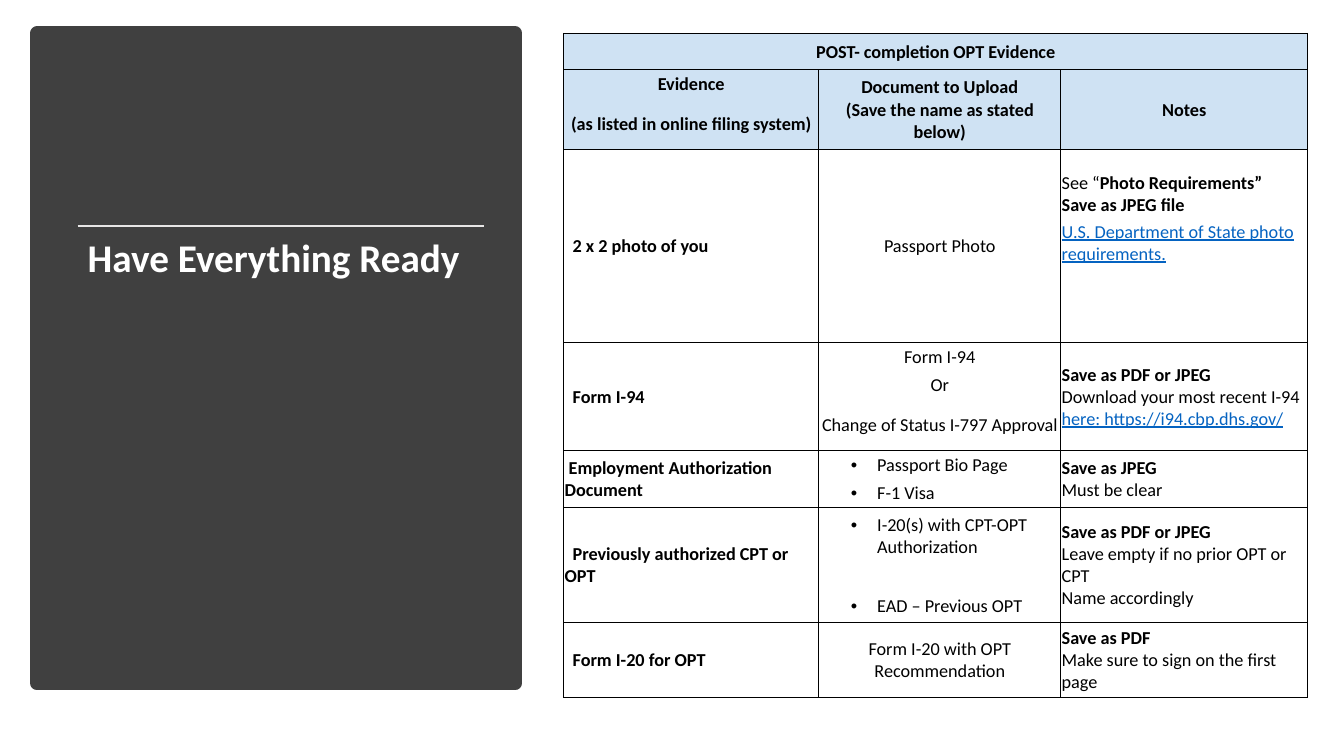
from dataclasses import dataclass

from lxml.etree import SubElement
from pptx import Presentation
from pptx.dml.color import RGBColor
from pptx.enum.shapes import MSO_CONNECTOR as Connector, MSO_SHAPE as Preset
from pptx.enum.text import MSO_ANCHOR as Anchor, MSO_AUTO_SIZE as AutoSize, PP_ALIGN as Align
from pptx.oxml.ns import qn
from pptx.slide import Slide
from pptx.table import Table, _Cell as Cell
from pptx.text.text import _Paragraph as Paragraph
from pptx.util import Inches, Pt


@dataclass(frozen=True)
class Theme:
    font: str = "Calibri"
    title_size: float = 28
    table_size: float = 13
    border_width: float = 0.5
    rule_width: float = 1.75
    ink: str = "000000"
    paper: str = "FFFFFF"
    panel: str = "404040"
    rule: str = "E7E6E6"
    header: str = "CFE2F3"
    link: str = "0563C1"


@dataclass(frozen=True)
class Piece:
    text: str
    bold: bool = False
    link: bool = False


@dataclass(frozen=True)
class Line:
    pieces: tuple[Piece, ...]
    align: Align = Align.LEFT
    indent: float = 0
    bullet: bool = False


@dataclass(frozen=True)
class Entry:
    row: int
    col: int
    lines: tuple[Line, ...]
    rows: int = 1
    cols: int = 1
    top: float = 0.01


THEME = Theme()
COLUMNS = (2.53, 2.4, 2.45)
GROUPS = (
    (0.36,),
    (0.28, 0.51),
    (0.66, 0.51, 0.74),
    (0.28, 0.28, 0.51),
    (0.28, 0.28),
    (0.57, 0.24, 0.34),
    (0.74,),
)


def heading(text: str) -> Line:
    return Line((Piece(text, bold=True),), Align.CENTER)


def label(text: str, indent: float = 0.08) -> tuple[Line, ...]:
    return (Line((Piece(text, bold=True),), indent=indent),)


def centred(text: str) -> tuple[Line, ...]:
    return (Line((Piece(text),), Align.CENTER),)


def bullet(text: str) -> tuple[Line, ...]:
    return (Line((Piece(text),), bullet=True),)


def note(file_type: str, *details: str) -> tuple[Line, ...]:
    return (Line((Piece(file_type, bold=True),)), *(Line((Piece(detail),)) for detail in details))


ENTRIES = (
    Entry(0, 0, (heading("POST- completion OPT Evidence"),), cols=3),
    Entry(1, 0, (heading("Evidence"),)),
    Entry(2, 0, (heading("(as listed in online filing system)"),)),
    Entry(1, 1, (heading("Document to Upload"), heading("(Save the name as stated below)")), rows=2),
    Entry(1, 2, (heading("Notes"),), rows=2),
    Entry(3, 0, label("2 x 2 photo of you"), rows=3),
    Entry(3, 1, centred("Passport Photo"), rows=3),
    Entry(3, 2, (
        Line((Piece("See “"), Piece("Photo Requirements”", bold=True))),
        Line((Piece("Save as JPEG file", bold=True),)),
    ), top=0.23),
    Entry(4, 2, (Line((Piece("U.S. Department of State photo requirements.", link=True),)),)),
    Entry(6, 0, label("Form I-94"), rows=3),
    Entry(6, 1, centred("Form I-94")),
    Entry(7, 1, centred("Or")),
    Entry(8, 1, centred("Change of Status I-797 Approval")),
    Entry(6, 2, (
        *note("Save as PDF or JPEG"),
        Line((Piece("Download your most recent I-94 "),
              Piece("here: https://i94.cbp.dhs.gov/", link=True))),
    ), rows=3),
    Entry(9, 0, label("Employment Authorization Document", 0.04), rows=2),
    Entry(9, 1, bullet("Passport Bio Page")),
    Entry(10, 1, bullet("F-1 Visa")),
    Entry(9, 2, note("Save as JPEG", "Must be clear"), rows=2),
    Entry(11, 0, label("Previously authorized CPT or OPT"), rows=3),
    Entry(11, 1, bullet("I-20(s) with CPT-OPT Authorization")),
    Entry(13, 1, bullet("EAD – Previous OPT")),
    Entry(11, 2, note("Save as PDF or JPEG", "Leave empty if no prior OPT or CPT",
                      "Name accordingly"), rows=3),
    Entry(14, 0, label("Form I-20 for OPT")),
    Entry(14, 1, centred("Form I-20 with OPT Recommendation")),
    Entry(14, 2, note("Save as PDF", "Make sure to sign on the first page")),
)


def rgb(value: str) -> RGBColor:
    return RGBColor.from_string(value)


def add_piece(paragraph: Paragraph, piece: Piece, size: float, color: str) -> None:
    run = paragraph.add_run()
    run.text = piece.text
    run.font.name = THEME.font
    run.font.size = Pt(size)
    run.font.bold = piece.bold
    run.font.underline = piece.link
    run.font.color.rgb = rgb(THEME.link if piece.link else color)


def write_line(paragraph: Paragraph, line: Line, size: float, color: str) -> None:
    paragraph.alignment = line.align
    properties = paragraph._p.get_or_add_pPr()
    properties.set("marL", str(Inches(0.57 if line.bullet else 0)))
    properties.set("indent", str(Inches(-0.26 if line.bullet else line.indent)))
    if line.bullet:
        SubElement(properties, qn("a:buFont"), typeface="Arial")
        SubElement(properties, qn("a:buChar"), char="•")
    for piece in line.pieces:
        add_piece(paragraph, piece, size, color)


def draw_borders(cell: Cell, top: bool, bottom: bool) -> None:
    properties = cell._tc.get_or_add_tcPr()
    for side, visible in (("L", True), ("R", True), ("T", top), ("B", bottom)):
        border = SubElement(properties, qn(f"a:ln{side}"), w=str(Pt(THEME.border_width)))
        if visible:
            fill = SubElement(border, qn("a:solidFill"))
            SubElement(fill, qn("a:srgbClr"), val=THEME.ink)
        else:
            SubElement(border, qn("a:noFill"))


def format_cells(table: Table) -> None:
    spans = {(entry.row, entry.col): entry.rows for entry in ENTRIES}
    row = 0
    for group in GROUPS:
        for position, height in enumerate(group):
            table.rows[row].height = Inches(height)
            for col in range(len(COLUMNS)):
                cell = table.cell(row, col)
                last = position + spans.get((row, col), 1) == len(group)
                draw_borders(cell, position == 0, last)
                cell.margin_left = cell.margin_right = cell.margin_top = Inches(0.01)
                cell.margin_bottom = 0
                cell.vertical_anchor = Anchor.MIDDLE
                if row < 3:
                    cell.fill.solid()
                    cell.fill.fore_color.rgb = rgb(THEME.header)
                else:
                    cell.fill.background()
                end = SubElement(cell.text_frame.paragraphs[0]._p, qn("a:endParaRPr"))
                end.set("sz", str(int(THEME.table_size * 100)))
            row += 1


def add_evidence_table(slide: Slide) -> None:
    row_count = sum(len(group) for group in GROUPS)
    height = sum(sum(group) for group in GROUPS)
    table = slide.shapes.add_table(row_count, len(COLUMNS), Inches(5.59), Inches(0.33),
                                   Inches(sum(COLUMNS)), Inches(height)).table
    table.first_row = table.horz_banding = False
    for column, width in zip(table.columns, COLUMNS):
        column.width = Inches(width)
    format_cells(table)
    for entry in ENTRIES:
        cell = table.cell(entry.row, entry.col)
        if entry.rows * entry.cols > 1:
            cell.merge(table.cell(entry.row + entry.rows - 1, entry.col + entry.cols - 1))
        cell.margin_top = Inches(entry.top)
        frame = cell.text_frame
        for index, line in enumerate(entry.lines):
            paragraph = frame.add_paragraph() if index else frame.paragraphs[0]
            write_line(paragraph, line, THEME.table_size, THEME.ink)


def add_title_panel(slide: Slide) -> None:
    panel = slide.shapes.add_shape(Preset.RECTANGLE, Inches(0.37), Inches(0.33), Inches(4.74), Inches(6.45))
    panel.shadow.inherit = False
    panel.fill.solid()
    panel.fill.fore_color.rgb = panel.line.color.rgb = rgb(THEME.panel)
    panel.line.width = Pt(10)
    rule = slide.shapes.add_connector(Connector.STRAIGHT, Inches(0.77), Inches(2.24), Inches(4.8), Inches(2.24))
    rule.line.color.rgb = rgb(THEME.rule)
    rule.line.width = Pt(THEME.rule_width)
    SubElement(rule._element.spPr, qn("a:effectLst"))
    title = slide.shapes.title
    title.left, title.top, title.width, title.height = map(Inches, (0.65, 2.32, 4.18, 4.13))
    frame = title.text_frame
    frame.word_wrap = True
    frame.auto_size = AutoSize.NONE
    frame.vertical_anchor = Anchor.TOP
    paragraph = frame.paragraphs[0]
    paragraph.line_spacing = 0.9
    paragraph.space_after = Pt(6)
    write_line(paragraph, label("Have Everything Ready", 0.12)[0], THEME.title_size, THEME.paper)
    slide.shapes._spTree.append(title._element)


def main() -> None:
    deck = Presentation()
    deck.slide_width, deck.slide_height = Inches(13.33), Inches(7.5)
    slide = deck.slides.add_slide(deck.slide_layouts[5])
    add_title_panel(slide)
    add_evidence_table(slide)
    deck.save("out.pptx")


if __name__ == "__main__":
    main()
